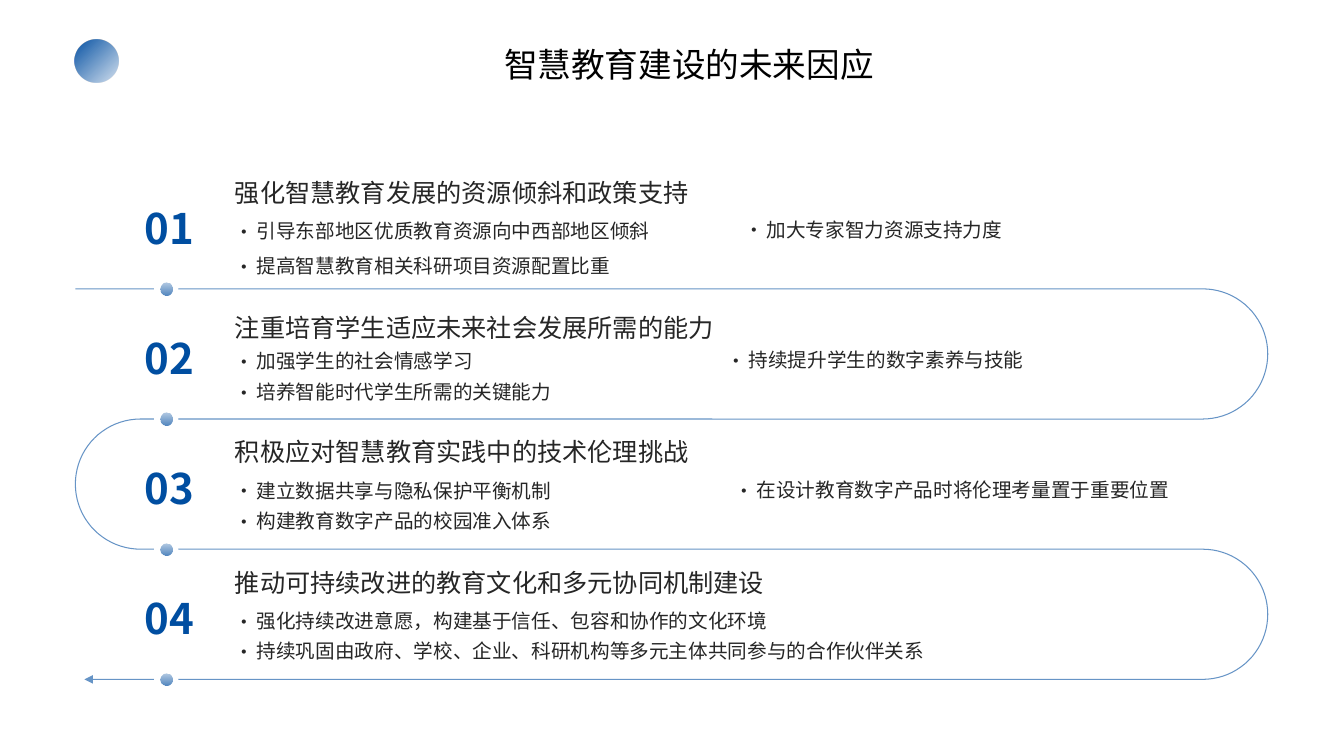
from math import cos, pi, sin

from lxml.etree import SubElement
from pptx import Presentation
from pptx.dml.color import RGBColor
from pptx.enum.shapes import MSO_SHAPE as Shape
from pptx.enum.text import MSO_ANCHOR as Anchor, MSO_AUTO_SIZE as AutoSize, PP_ALIGN as Align
from pptx.oxml.ns import qn
from pptx.util import Cm, Pt

BLUE = RGBColor(0x00, 0x4E, 0xA1)
INK = RGBColor(0x26, 0x26, 0x26)
BLACK = RGBColor(0x00, 0x00, 0x00)
WHITE = RGBColor(0xFF, 0xFF, 0xFF)
CJK = "Noto Sans CJK SC"

# Lengths in centimetres
PATH_LEFT, PATH_RIGHT, ARROW_TIP = 1.9, 31.95, 2.13
FIRST_LINE, PITCH = 7.28, 3.28
STATION_X = 4.19
BULLET_INDENT = 0.55

# Heading, left-hand points, line spacings, right-hand point and its offset
STRATEGIES = [
    ("强化智慧教育发展的资源倾斜和政策支持",
     ["引导东部地区优质教育资源向中西部地区倾斜", "提高智慧教育相关科研项目资源配置比重"],
     (1.5, 1.5, 1.5), "加大专家智力资源支持力度", 12.85),
    ("注重培育学生适应未来社会发展所需的能力",
     ["加强学生的社会情感学习", "培养智能时代学生所需的关键能力"],
     (1.5, 1.3, 1.3), "持续提升学生的数字素养与技能", 12.4),
    ("积极应对智慧教育实践中的技术伦理挑战",
     ["建立数据共享与隐私保护平衡机制", "构建教育数字产品的校园准入体系"],
     (1.3, 1.5, 1.3), "在设计教育数字产品时将伦理考量置于重要位置", 12.6),
    ("推动可持续改进的教育文化和多元协同机制建设",
     ["强化持续改进意愿，构建基于信任、包容和协作的文化环境",
      "持续巩固由政府、学校、企业、科研机构等多元主体共同参与的合作伙伴关系"],
     (1.3, 1.5, 1.3), None, 0),
]


def format_runs(paragraph, size, color, font=CJK, bold=False):
    for run in paragraph.runs:
        run.font.size, run.font.bold, run.font.name = Pt(size), bold, font
        run.font.color.rgb = color
        SubElement(run.font._element, qn("a:ea"), typeface=CJK)


def add_bullet(paragraph):
    properties = paragraph._p.get_or_add_pPr()
    properties.set("marL", str(Cm(BULLET_INDENT)))
    properties.set("indent", str(-Cm(BULLET_INDENT)))
    SubElement(properties, qn("a:buFont"), typeface=CJK)
    SubElement(properties, qn("a:buChar"), char="·")


def set_frame(frame, bottom=0, wrap=True):
    frame.margin_left = frame.margin_right = frame.margin_top = 0
    frame.margin_bottom = Cm(bottom)
    frame.auto_size = AutoSize.NONE
    frame.vertical_anchor = Anchor.MIDDLE
    frame.word_wrap = wrap


def add_text(slide, left, top, width, height, lines, **frame_options):
    box = slide.shapes.add_textbox(Cm(left), Cm(top), Cm(width), Cm(height))
    set_frame(box.text_frame, **frame_options)
    box.text_frame.text = "\n".join(lines)
    return box.text_frame.paragraphs


def add_circle(slide, center_x, center_y, diameter):
    circle = slide.shapes.add_shape(
        Shape.OVAL, Cm(center_x - diameter / 2), Cm(center_y - diameter / 2),
        Cm(diameter), Cm(diameter))
    circle.shadow.inherit = False
    circle.line.fill.background()
    return circle


def fill_fading(shape, angle, stops):
    """Fill with blue of varying opacity; stops are (position, opacity in percent)."""
    shape.fill.gradient()
    shape.fill.gradient_angle = angle
    for stop, (position, _) in zip(shape.fill.gradient_stops, stops):
        stop.position = position
        stop.color.rgb = BLUE
    gradient = shape._element.spPr.find(qn("a:gradFill"))
    for color, (_, opacity) in zip(gradient.iter(qn("a:srgbClr")), stops):
        SubElement(color, qn("a:alpha"), val=str(opacity * 1000))


def add_header(slide, left, top, width, height):
    title = slide.shapes.title
    title.left, title.top, title.width, title.height = map(Cm, (left, top, width, height))
    set_frame(title.text_frame)
    title.text_frame.text = "智慧教育建设的未来因应"
    heading = title.text_frame.paragraphs[0]
    heading.alignment, heading.line_spacing = Align.CENTER, 0.9
    format_runs(heading, 24, BLACK, "Times New Roman")
    ornament = add_circle(slide, 2.43, top + 0.37, 1.1)
    ornament.rotation = 45
    fill_fading(ornament, 180, [(0, 0), (0.88, 100)])


def half_turn(center_x, center_y, radius, side):
    """Points from the top to the bottom of a semicircle; side is 1 right, -1 left."""
    steps = 40
    return [(Cm(center_x + side * radius * sin(pi * step / steps)),
             Cm(center_y - radius * cos(pi * step / steps))) for step in range(steps + 1)]


def add_winding_path(slide, left, right, top, pitch):
    radius = pitch / 2
    points = []
    for turn in range(len(STRATEGIES) - 1):
        side = 1 if turn % 2 == 0 else -1
        center_x = right - radius if side == 1 else left + radius
        points += half_turn(center_x, top + (turn + 0.5) * pitch, radius, side)
    points.append((Cm(ARROW_TIP), Cm(top + pitch * (len(STRATEGIES) - 1))))
    builder = slide.shapes.build_freeform(Cm(left), Cm(top))
    builder.add_line_segments(points, close=False)
    path = builder.convert_to_shape()
    path.shadow.inherit = False
    path.fill.background()
    path.line.width = Pt(0.75)
    path.line.color.rgb = BLUE
    outline = path.line._get_or_add_ln()
    SubElement(next(outline.iter(qn("a:srgbClr"))), qn("a:alpha"), val="60000")
    SubElement(outline, qn("a:tailEnd"), type="triangle")


def add_station(slide, center_x, center_y):
    halo = add_circle(slide, center_x, center_y, 0.61)
    halo.fill.solid()
    halo.fill.fore_color.rgb = WHITE
    fill_fading(add_circle(slide, center_x, center_y, 0.31), 270, [(0, 30), (1, 70)])


def add_strategy(slide, top, height, number, strategy):
    heading, points, spacings, side_point, side_offset = strategy
    body_left, body_width = 5.92, 24

    body = add_text(slide, body_left, top, body_width, height, [heading, *points], bottom=0.2)
    for paragraph, spacing in zip(body, spacings):
        paragraph.line_spacing = spacing
    format_runs(body[0], 18, INK, "Arial")
    bullets = list(body[1:])
    if side_point:
        bullets += add_text(slide, body_left + side_offset, top + 1.28,
                            body_width - side_offset, 1, [side_point])
    for bullet in bullets:
        add_bullet(bullet)
        format_runs(bullet, 14, INK)

    label = add_text(slide, 3.43, top, 1.68, height, [f"{number:02}"],
                     bottom=0.2, wrap=False)[0]
    label.alignment, label.line_spacing = Align.CENTER, 1.3
    format_runs(label, 30, BLUE, bold=True)
    add_station(slide, STATION_X, top + height)


def main():
    presentation = Presentation()
    presentation.slide_width, presentation.slide_height = Cm(33.87), Cm(19.05)
    slide = presentation.slides.add_slide(presentation.slide_layouts[5])
    add_header(slide, 2.36, 1.17, 30, 1)
    add_winding_path(slide, PATH_LEFT, PATH_RIGHT, FIRST_LINE, PITCH)
    for index, strategy in enumerate(STRATEGIES):
        add_strategy(slide, FIRST_LINE + (index - 1) * PITCH, PITCH, index + 1, strategy)
    presentation.save("out.pptx")


if __name__ == "__main__":
    main()
